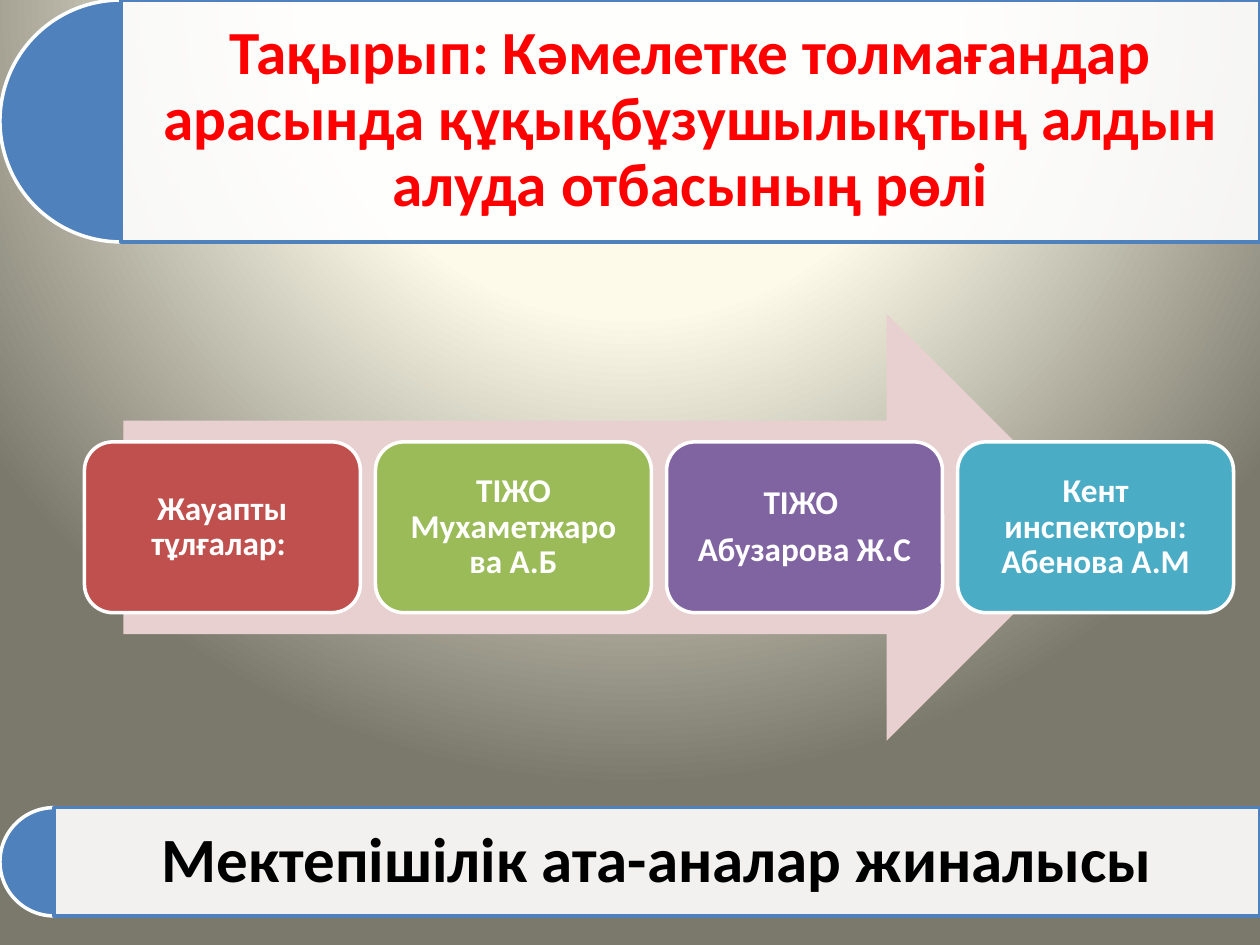
from lxml import etree
from pptx import Presentation
from pptx.dml.color import RGBColor
from pptx.enum.shapes import MSO_SHAPE
from pptx.enum.text import MSO_ANCHOR, MSO_AUTO_SIZE, PP_ALIGN
from pptx.oxml.ns import qn
from pptx.util import Inches, Pt

PIE, RECT = MSO_SHAPE.PIE, MSO_SHAPE.RECTANGLE
ARROW, ROUNDED = MSO_SHAPE.RIGHT_ARROW, MSO_SHAPE.ROUNDED_RECTANGLE
MIDDLE, CENTER, NO_FIT = MSO_ANCHOR.MIDDLE, PP_ALIGN.CENTER, MSO_AUTO_SIZE.NONE
TITLE_ONLY = 5
W, H = 10, 7.5
BLUE, WHITE = "4F81BD", "FFFFFF"


def rgb(value):
    return RGBColor.from_string(value)


def paint(sp, fill, line=None, alpha=None):
    sp.fill.solid()
    sp.fill.fore_color.rgb = rgb(fill)
    if alpha:
        color = sp._element.spPr.find(qn("a:solidFill"))[0]
        etree.SubElement(color, qn("a:alpha")).set("val", str(alpha * 1000))
    if line:
        sp.line.color.rgb = rgb(line)
        sp.line.width = Pt(2)
    else:
        sp.line.fill.background()


def place(sp, x, y, w, h):
    sp.left, sp.top, sp.width, sp.height = map(Inches, (x, y, w, h))


def add_shape(slide, kind, box, fill, line=None):
    sp = slide.shapes.add_shape(kind, *map(Inches, box))
    sp.shadow.inherit = False
    paint(sp, fill, line)
    return sp


def write(sp, lines, size, color):
    tf = sp.text_frame
    tf.word_wrap, tf.auto_size, tf.vertical_anchor = True, NO_FIT, MIDDLE
    tf.margin_left = tf.margin_right = tf.margin_top = tf.margin_bottom = Inches(0.15)
    tf.text = "\n".join(lines)
    for p in tf.paragraphs:
        p.alignment, p.line_spacing = CENTER, 0.9
        p.space_after = Pt(0.35 * size)
        p.font.name, p.font.size, p.font.bold = "Calibri", Pt(size), True
        p.font.color.rgb = rgb(color)


def add_background(slide):
    """Radial gradient centred above the slide."""
    fill = slide.background.fill
    fill.gradient()
    grad = slide._element.cSld.bg.bgPr.find(qn("a:gradFill"))
    for child in list(grad):
        grad.remove(child)
    stops = etree.SubElement(grad, qn("a:gsLst"))
    for pos, color in ((0, "FEFCEE"), (40, "FDFAEA"), (100, "7B796B")):
        stop = etree.SubElement(stops, qn("a:gs"), pos=str(pos * 1000))
        etree.SubElement(stop, qn("a:srgbClr"), val=color)
    circle = etree.SubElement(grad, qn("a:path"), path="circle")
    etree.SubElement(circle, qn("a:fillToRect"),
                     l="50000", t="-80000", r="50000", b="180000")


def add_banner(slide, box, text, size, color, panel=None):
    """Half disc on the left, text panel over the rest of the box."""
    x, y, w, h = box
    disc = add_shape(slide, PIE, (x, y, h, h), BLUE, WHITE)
    disc.adjustments[0], disc.adjustments[1] = 54, 162  # 90 and 270 degrees
    panel_box = (x + h / 2, y, w - h / 2, h)
    if panel is None:
        panel = add_shape(slide, RECT, panel_box, WHITE)
    else:
        place(panel, *panel_box)
        slide.shapes._spTree.append(panel._element)  # in front of the disc
    paint(panel, WHITE, BLUE, alpha=90)
    write(panel, [text], size, color)


def add_process(slide, box, cards):
    """Wide arrow with a row of equal cards across its middle."""
    x, y, w, h = box
    add_shape(slide, ARROW, (x + 0.034 * w, y, 0.85 * w, h), "E8D0D0")
    pitch = 2.31
    card_w, card_h = w - pitch * (len(cards) - 1), 0.4 * h
    for i, (lines, fill) in enumerate(cards):
        card_box = (x + i * pitch, y + (h - card_h) / 2, card_w, card_h)
        card = add_shape(slide, ROUNDED, card_box, fill, WHITE)
        write(card, lines, 19, WHITE)


def main():
    prs = Presentation()
    prs.slide_width, prs.slide_height = Inches(W), Inches(H)
    slide = prs.slides.add_slide(prs.slide_layouts[TITLE_ONLY])
    add_background(slide)

    # Meeting kind, topic, people in charge
    add_banner(slide, (0, 6.41, W, 0.86), "Мектепішілік ата-аналар жиналысы",
               36, "000000")
    add_banner(slide, (0, 0, W, 1.92),
               "Тақырып: Кәмелетке толмағандар арасында құқықбұзушылықтың "
               "алдын алуда отбасының рөлі", 35, "FF0000", slide.shapes.title)
    add_process(slide, (0.67, 2.49, 9.12, 3.39), [
        (["Жауапты тұлғалар: "], "C0504D"),
        (["ТІЖО Мухаметжарова А.Б"], "9BBB59"),
        (["ТІЖО ", "Абузарова Ж.С"], "8064A2"),
        (["Кент инспекторы: Абенова А.М"], "4BACC6"),
    ])
    prs.save("out.pptx")


if __name__ == "__main__":
    main()
